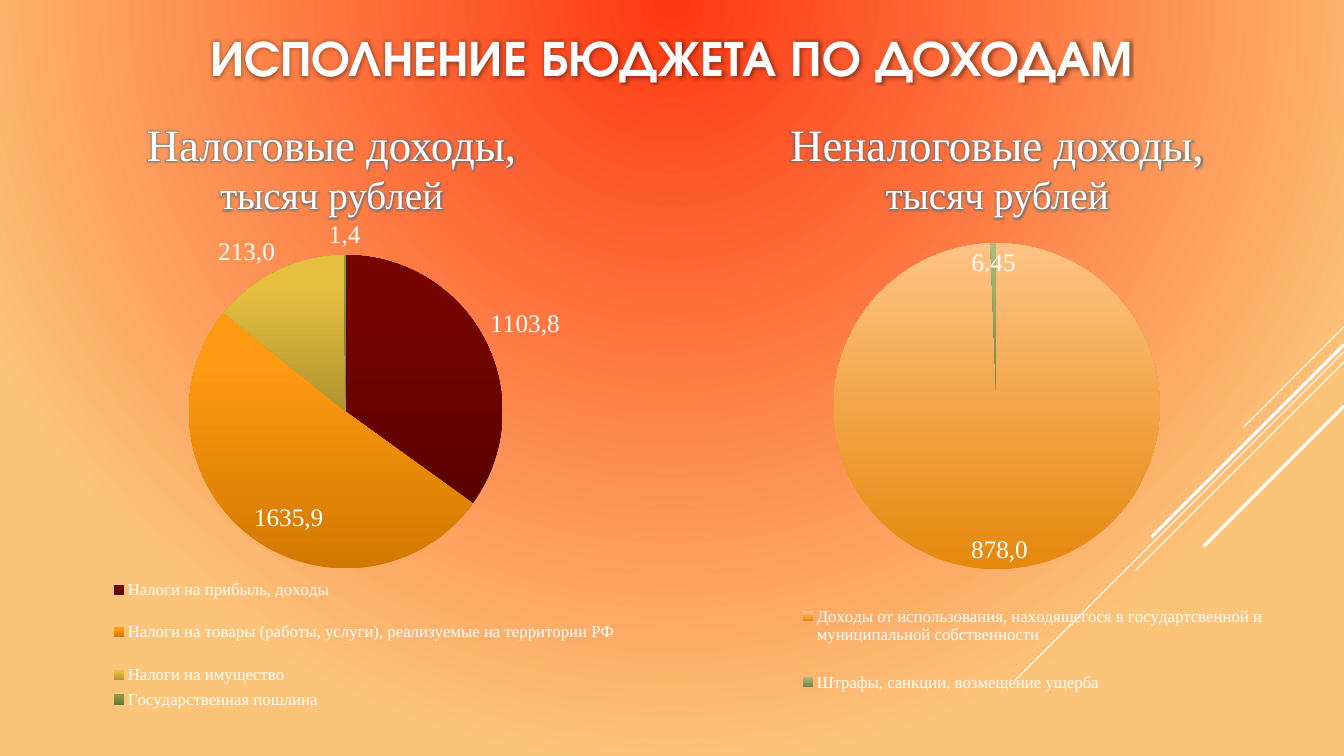
import pptx
import pptx.util
import pptx.chart.data
import pptx.dml.color
import pptx.enum.chart
import pptx.enum.shapes
import pptx.enum.text
import pptx.oxml
import pptx.oxml.ns
import lxml.etree

Inches = pptx.util.Inches
Pt = pptx.util.Pt
qn = pptx.oxml.ns.qn
LabelPosition = pptx.enum.chart.XL_LABEL_POSITION
OUTSIDE, INSIDE = LabelPosition.OUTSIDE_END, LabelPosition.INSIDE_END

# Content
COLORS = {"white": "FFFFFF", "center": "FF3712", "edge": "FCC479",
          "title_glow": "000000", "heading_glow": "406C80"}
HEADING_FONT = "TeX Gyre Adventor"
BODY_FONT = "Times New Roman"

TITLE = [("ИСПОЛНЕНИЕ БЮДЖЕТА ПО ДОХОДАМ", 36)]
UNIT = ("тысяч рублей", 28)
HEADINGS = [
    ([("Налоговые доходы,", 32), UNIT], (1.34, 1.1, 3.9, 1.11)),
    ([("Неналоговые доходы,", 32), UNIT], (7.72, 1.1, 4.34, 1.11)),
]

# Slices: category, value, label text, label position, bottom and top colours
# Layouts: left, top, width, height as shares of the chart
CHARTS = [
    {"box": (0.37, 2.11, 6.18, 5.27),
     "plot": (0.23, 0.08, 0.53, 0.59),
     "legend": (0.1, 0.68, 0.85, 0.3),
     "top_stop": 0.8,
     "slices": [
         ("Налоги на прибыль, доходы\n", 956.59, "1103,8", OUTSIDE, "5A0200", "750300"),
         ("Налоги на товары (работы, услуги), реализуемые на территории РФ\n",
          1394.41, "1635,9", INSIDE, "D27800", "FF9911"),
         ("Налоги на имущество", 381.82, "213,0", OUTSIDE, "B19431", "E5C03F"),
         ("Государственная пошлина\n", 5.21, "1,4", OUTSIDE, "647735", "829A45"),
     ]},
    {"box": (6.83, 2.21, 5.99, 5.06),
     "plot": (0.24, 0.04, 0.54, 0.64),
     "legend": (0.17, 0.73, 0.8, 0.25),
     "top_stop": 1.0,
     "slices": [
         ("Доходы от использования, находящегося в государтсвенной и "
          "муниципальной собственности\n", 1066.45, "878,0", INSIDE, "E5880C", "FFC386"),
         ("Штрафы, санкции, возмещение ущерба\n", 6.45, None, INSIDE, "6F8045", "AEBC79"),
     ]},
]

# Diagonals run down and left from the right edge: start height, run, line width
RIGHT_EDGE = 13.33
DIAGONALS = [(3.24, 1, 0.75), (3.49, 3.26, 0.75), (3.59, 2.07, 0.75),
             (3.42, 1.91, 2.25), (4.03, 1.39, 2.25)]


def rgb(value):
    return pptx.dml.color.RGBColor.from_string(value)


def format_font(font, size, name=BODY_FONT, bold=None):
    font.size = Pt(size)
    font.name = name
    font.bold = bold
    font.color.rgb = rgb(COLORS["white"])


def add_text(lines, box, font=BODY_FONT, bold=None, wrap=False, glow="heading_glow",
             radius=5, opacity=60):
    text_box = slide.shapes.add_textbox(*map(Inches, box))
    frame = text_box.text_frame
    frame.word_wrap = wrap
    frame.vertical_anchor = pptx.enum.text.MSO_ANCHOR.MIDDLE
    for index, (text, size) in enumerate(lines):
        paragraph = frame.add_paragraph() if index else frame.paragraphs[0]
        paragraph.alignment = pptx.enum.text.PP_ALIGN.CENTER
        run = paragraph.add_run()
        run.text = text
        format_font(run.font, size, font, bold)
        # Soft halo around the letters
        effects = pptx.oxml.parse_xml(
            f'<a:effectLst {pptx.oxml.ns.nsdecls("a")}><a:glow rad="{Pt(radius)}">'
            f'<a:srgbClr val="{COLORS[glow]}"><a:alpha val="{opacity * 1000}"/></a:srgbClr>'
            '</a:glow></a:effectLst>')
        run.font._element.find(qn("a:solidFill")).addnext(effects)


def set_layout(parent, index, shares, inner=False):
    for old in parent.findall(qn("c:layout")):
        parent.remove(old)
    layout = lxml.etree.Element(qn("c:layout"))
    manual = lxml.etree.SubElement(layout, qn("c:manualLayout"))
    settings = [("layoutTarget", "inner")] if inner else []
    settings += [("xMode", "edge"), ("yMode", "edge")]
    settings += zip("xywh", map(str, shares))
    for name, value in settings:
        lxml.etree.SubElement(manual, qn("c:" + name)).set("val", value)
    parent.insert(index, layout)


def set_gradient(fill, first, last, last_position=1.0):
    fill.gradient()
    for stop, color, position in zip(fill.gradient_stops, (first, last), (0, last_position)):
        stop.color.rgb = rgb(color)
        stop.position = position


def add_pie(content):
    slices = content["slices"]
    data = pptx.chart.data.CategoryChartData()
    data.categories = [item[0] for item in slices]
    data.add_series("Series 1", [item[1] for item in slices])
    chart = slide.shapes.add_chart(pptx.enum.chart.XL_CHART_TYPE.PIE,
                                   *map(Inches, content["box"]), data).chart
    chart.has_title = False
    format_font(chart.font, 10, HEADING_FONT)

    chart.has_legend = True
    legend = chart.legend
    legend.position = pptx.enum.chart.XL_LEGEND_POSITION.BOTTOM
    legend.include_in_layout = False
    format_font(legend.font, 12)
    set_layout(legend._element, 1, content["legend"])
    set_layout(chart._chartSpace.find(".//" + qn("c:plotArea")), 0, content["plot"], inner=True)

    series = chart.plots[0].series[0]
    labels = series.data_labels
    labels.show_value = True
    labels.number_format = "#,##0.00"
    labels.number_format_is_linked = False
    labels.position = INSIDE
    format_font(labels.font, 18)
    for index, (_, _, text, position, bottom, top) in enumerate(slices):
        point = series.points[index]
        set_gradient(point.format.fill, bottom, top, content["top_stop"])
        point.format.fill.gradient_angle = 90
        point.format.line.fill.background()
        if text:
            label = point.data_label
            run = label.text_frame.paragraphs[0].add_run()
            run.text = text
            format_font(run.font, 18)
            label.position = position


presentation = pptx.Presentation()
presentation.slide_width = Inches(13.33)
presentation.slide_height = Inches(7.5)
slide = presentation.slides.add_slide(presentation.slide_layouts[6])

# Background: circular gradient from the middle of the top edge
set_gradient(slide.background.fill, COLORS["center"], COLORS["edge"])
gradient = slide._element.find(".//" + qn("a:gradFill"))
gradient.replace(gradient.find(qn("a:lin")), pptx.oxml.parse_xml(
    f'<a:path {pptx.oxml.ns.nsdecls("a")} path="circle">'
    '<a:fillToRect l="50000" t="0" r="50000" b="100000"/></a:path>'))

# Diagonal lines
for top, run_length, width in DIAGONALS:
    diagonal = slide.shapes.add_connector(
        pptx.enum.shapes.MSO_CONNECTOR.STRAIGHT, Inches(RIGHT_EDGE), Inches(top),
        Inches(RIGHT_EDGE - run_length), Inches(top + run_length))
    diagonal.line.color.rgb = rgb(COLORS["white"])
    diagonal.line.width = Pt(width)
    lxml.etree.SubElement(diagonal._element.spPr, qn("a:effectLst"))

# Title and headings
add_text(TITLE, (0, 0.1, 13.33, 0.91), font=HEADING_FONT, bold=True, wrap=True,
         glow="title_glow", opacity=40)
for lines, box in HEADINGS:
    add_text(lines, box)

# Charts
for content in CHARTS:
    add_pie(content)

presentation.save("out.pptx")
